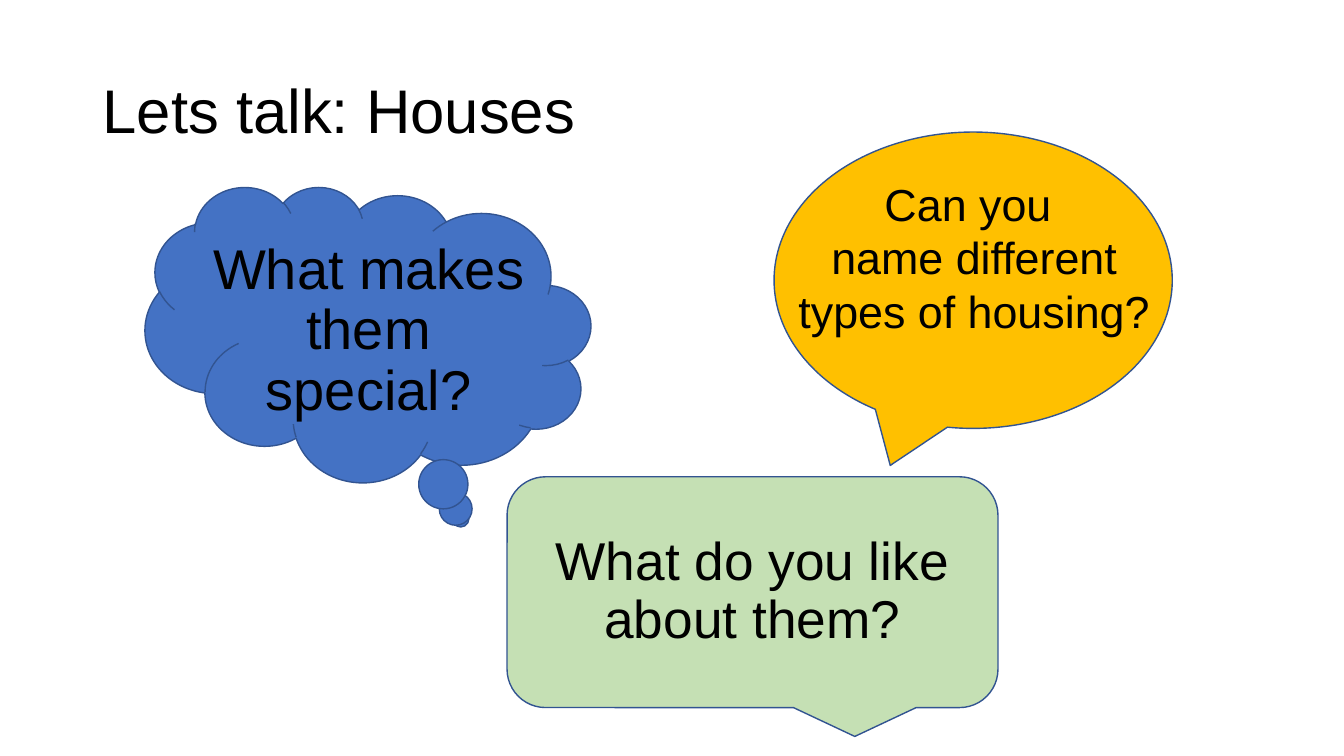
from pptx import Presentation
from pptx import util as u
from pptx.dml.color import RGBColor
from pptx.enum import shapes, text
from lxml import etree

BLACK = RGBColor(0x00, 0x00, 0x00)
BLUE = RGBColor(0x44, 0x72, 0xC4)
GOLD = RGBColor(0xFF, 0xC0, 0x00)
GREEN = RGBColor(0xC5, 0xE0, 0xB4)
OUTLINE = RGBColor(0x32, 0x54, 0x91)
KIND = shapes.MSO_SHAPE

prs = Presentation()
prs.slide_width, prs.slide_height = u.Inches(13.33), u.Inches(7.5)
slide = prs.slides.add_slide(prs.slide_layouts[6])


def place(left, top, width, height):
    """Turn percentages of the slide's size into lengths."""
    col, row = prs.slide_width / 100, prs.slide_height / 100
    return [round(n) for n in (left * col, top * row, width * col, height * row)]


def write(s, *lines, size, align=text.PP_ALIGN.CENTER,
          anchor=text.MSO_ANCHOR.TOP, spacing=0.9):
    tf = s.text_frame
    tf.word_wrap = True
    tf.vertical_anchor = anchor
    for i, line in enumerate(lines):
        p = tf.add_paragraph() if i else tf.paragraphs[0]
        p.alignment, p.line_spacing = align, spacing
        r = p.add_run()
        r.text = line
        r.font.name, r.font.size = "Arial", u.Pt(size)
        r.font.color.rgb = BLACK


# Title
title = slide.shapes.add_textbox(*place(6.9, 5.33, 86.27, 19.33))
write(title, "Lets talk: Houses", size=44, align=text.PP_ALIGN.LEFT,
      anchor=text.MSO_ANCHOR.MIDDLE)

# Callouts: kind, fill, mirrored, box
callouts = []
for kind, fill, mirrored, box in [
    (KIND.CLOUD_CALLOUT, BLUE, True, (10.8, 24.67, 33.15, 39.07)),
    (KIND.OVAL_CALLOUT, GOLD, False, (57.6, 17.47, 29.63, 39.2)),
    (KIND.ROUNDED_RECTANGULAR_CALLOUT, GREEN, True, (37.73, 63.07, 36.53, 30.53)),
]:
    s = slide.shapes.add_shape(kind, *place(*box))
    s.shadow.inherit = False
    s.fill.solid()
    s.fill.fore_color.rgb = fill
    s.line.color.rgb, s.line.width = OUTLINE, u.Pt(1)
    if mirrored:
        s._element.spPr.xfrm.set("flipH", "1")
    callouts.append(s)

# Questions: two in boxes over their callouts, one inside its callout
special = slide.shapes.add_textbox(*place(14.78, 31.2, 25.28, 25.6))
write(special, "What makes them special?", size=40)

types_of_housing = slide.shapes.add_textbox(*place(58.2, 22.67, 28.58, 22.93))
write(types_of_housing, "Can you ", "name different types of housing?",
      size=32, spacing=1.0)

write(callouts[-1], "What do you like about them?", size=38,
      anchor=text.MSO_ANCHOR.MIDDLE)

prs.save("out.pptx")
